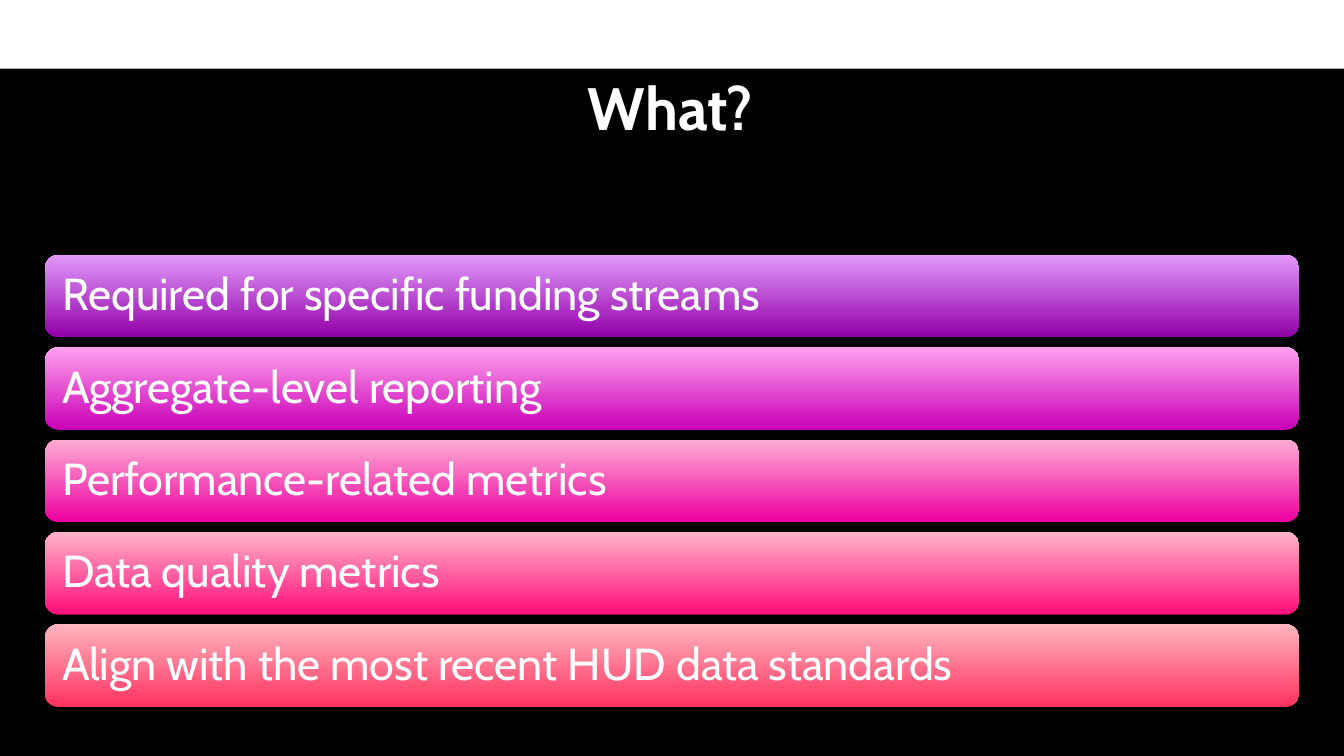
from dataclasses import dataclass

from lxml.etree import SubElement
from pptx import Presentation
from pptx.dml.color import RGBColor
from pptx.enum.shapes import MSO_SHAPE
from pptx.enum.text import MSO_ANCHOR, PP_ALIGN
from pptx.oxml.ns import qn
from pptx.shapes.autoshape import Shape
from pptx.slide import Slide
from pptx.util import Emu, Inches, Pt

SCALE = 9525
LEFT, TOP, WIDTH, HEIGHT, GAP = 32, 182, 896, 59, 7


@dataclass
class Bar:
    text: str
    base: str
    light: str


BARS = [
    Bar("Required for specific funding streams", "9100A7", "E299FC"),
    Bar("Aggregate-level reporting", "C900B6", "FFA1EE"),
    Bar("Performance-related metrics", "EB009F", "FFADD4"),
    Bar("Data quality metrics", "FF0F7B", "FFB3C7"),
    Bar("Align with the most recent HUD data standards", "FF315F", "FFB6BF"),
]


def px(count: int) -> Emu:
    return Emu(count * SCALE)


def color(code: str) -> RGBColor:
    return RGBColor.from_string(code)


def write(shape: Shape, text: str, size: int, align: PP_ALIGN,
          anchor: MSO_ANCHOR, bold: bool = False, lead: float = 1.0) -> None:
    frame = shape.text_frame
    frame.word_wrap = True
    frame.vertical_anchor = anchor
    frame.margin_left = frame.margin_right = Inches(0.1)
    frame.margin_top = frame.margin_bottom = Inches(0.1)
    para = frame.paragraphs[0]
    para.alignment = align
    para.line_spacing = lead
    run = para.add_run()
    run.text = text
    run.font.name = "Cabin"
    run.font.size = Pt(size)
    run.font.bold = bold
    run.font.color.rgb = color("FFFFFF")


def shade(shape: Shape) -> None:
    effects = shape._element.spPr.find(qn("a:effectLst"))
    outer = SubElement(effects, qn("a:outerShdw"), blurRad=str(Pt(3.1)),
                       dist=str(Pt(1.8)), dir="5400000", rotWithShape="0")
    black = SubElement(outer, qn("a:srgbClr"), val="000000")
    SubElement(black, qn("a:alpha"), val="35000")


def draw_panel(slide: Slide) -> None:
    panel = slide.shapes.add_shape(
        MSO_SHAPE.RECTANGLE, px(0), px(49), px(960), px(491))
    panel.shadow.inherit = False
    panel.fill.solid()
    panel.fill.fore_color.rgb = color("000000")
    panel.line.fill.background()


def draw_title(slide: Slide) -> None:
    title = slide.shapes.add_textbox(px(113), px(41), px(732), px(84))
    write(title, "What?", 32, PP_ALIGN.CENTER, MSO_ANCHOR.TOP, bold=True)


def draw_bar(slide: Slide, bar: Bar, top: int) -> None:
    shape = slide.shapes.add_shape(
        MSO_SHAPE.ROUNDED_RECTANGLE, px(LEFT), px(top), px(WIDTH), px(HEIGHT))
    shape.fill.gradient()
    shape.fill.gradient_angle = 90
    for stop, code in zip(shape.fill.gradient_stops, (bar.base, bar.light)):
        stop.color.rgb = color(code)
    shape.line.fill.background()
    shape.shadow.inherit = False
    shade(shape)
    write(shape, bar.text, 24, PP_ALIGN.LEFT, MSO_ANCHOR.MIDDLE, lead=0.9)


def main() -> None:
    deck = Presentation()
    deck.slide_width, deck.slide_height = px(960), px(540)
    slide = deck.slides.add_slide(deck.slide_layouts[6])
    draw_panel(slide)
    draw_title(slide)
    for row, bar in enumerate(BARS):
        draw_bar(slide, bar, TOP + row * (HEIGHT + GAP))
    deck.save("out.pptx")


if __name__ == "__main__":
    main()
